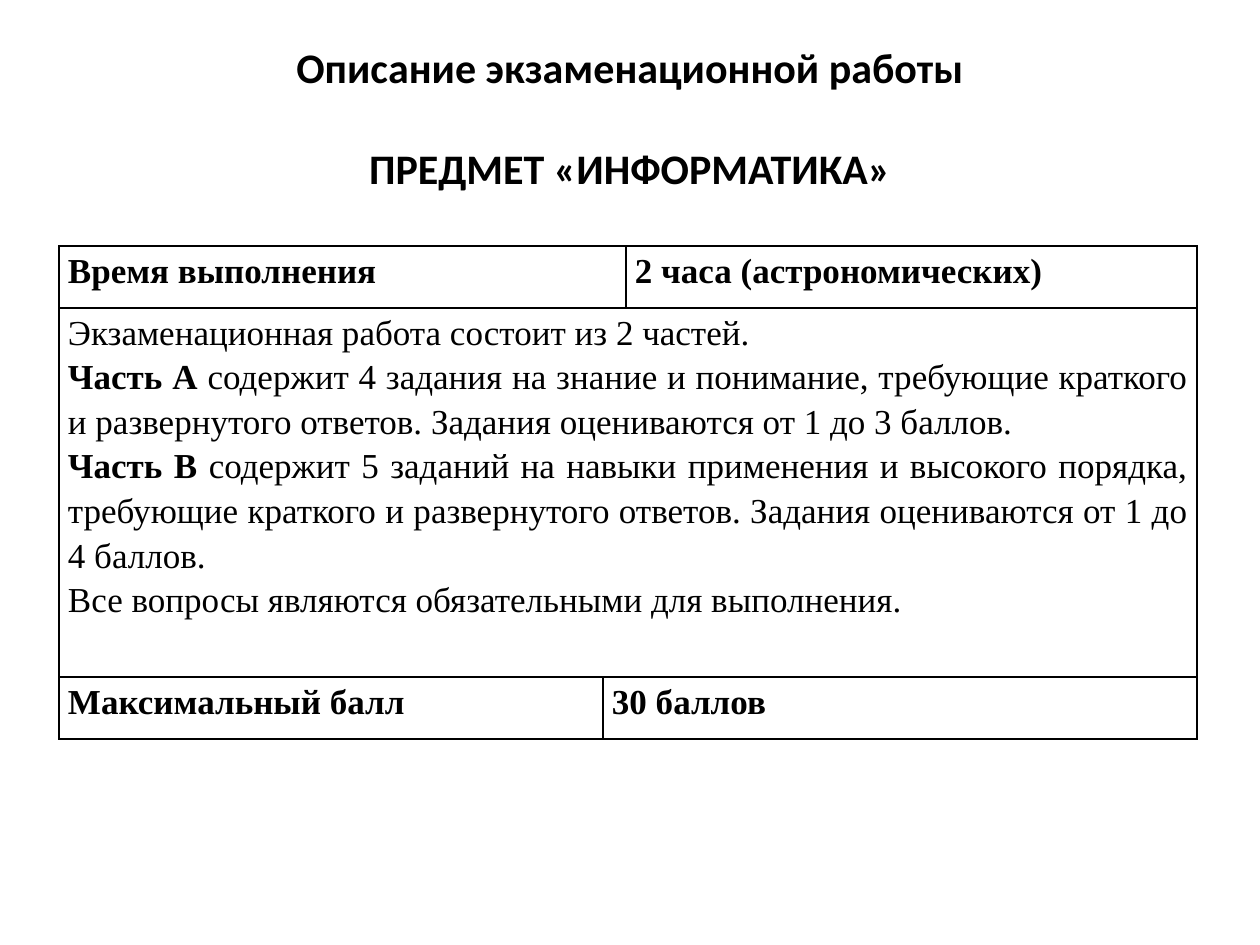
from lxml import etree
from pptx import Presentation
from pptx.dml.color import RGBColor
from pptx.enum.text import MSO_ANCHOR, PP_ALIGN
from pptx.oxml.ns import qn
from pptx.util import Emu, Pt

PX = 914400 // 126
LEFT, CENTER, JUST = PP_ALIGN.LEFT, PP_ALIGN.CENTER, PP_ALIGN.JUSTIFY
MIDDLE = MSO_ANCHOR.MIDDLE
COLORS = {"ink": "000000"}

# Content: a paragraph is (alignment, [(text, bold), ...])
TITLE = ["Описание экзаменационной работы", "ПРЕДМЕТ «ИНФОРМАТИКА»"]
ABOUT = [
    (JUST, [("Экзаменационная работа состоит из 2 частей.", False)]),
    (JUST, [("Часть А", True),
            (" содержит 4 задания на знание и понимание, требующие краткого "
             "и развернутого ответов. Задания оцениваются от 1 до 3 баллов.", False)]),
    (JUST, [("Часть В", True),
            (" содержит 5 заданий на навыки применения и высокого порядка, "
             "требующие краткого и развернутого ответов. "
             "Задания оцениваются от 1 до 4 баллов.", False)]),
    (LEFT, [("Все вопросы являются обязательными для выполнения.", False)]),
]
# Cells: (row, first column, last column, paragraphs)
CELLS = [
    (0, 0, 1, [(LEFT, [("Время выполнения", True)])]),
    (0, 2, 2, [(LEFT, [("2 часа (астрономических)", True)])]),
    (1, 0, 2, ABOUT),
    (2, 0, 0, [(JUST, [("Максимальный балл", True)])]),
    (2, 1, 2, [(JUST, [("30 баллов", True)])]),
]
COLS, ROWS = [544, 17, 571], [62, 369, 62]
HEAD = {"name": "Calibri", "size": Pt(24), "bold": True}
BODY = {"name": "Times New Roman", "size": Pt(20)}
INSET = {"margin_left": 9, "margin_right": 9, "margin_top": 0, "margin_bottom": 0}


def px(n):
    return Emu(n * PX)


def style(font, **values):
    for key, val in values.items():
        setattr(font, key, val)
    font.color.rgb = RGBColor.from_string(COLORS["ink"])


def add_title(slide):
    box = slide.shapes.add_textbox(px(63), px(38), px(1134), px(158))
    frame = box.text_frame
    frame.word_wrap = True
    frame.vertical_anchor = MIDDLE
    for i, line in enumerate(TITLE):
        para = frame.paragraphs[0] if i == 0 else frame.add_paragraph()
        para.alignment = CENTER
        para.space_before = Pt(29 * i)
        run = para.add_run()
        run.text = line
        style(run.font, **HEAD)


def add_border(cell):
    props = cell._tc.get_or_add_tcPr()
    for i, side in enumerate(("lnL", "lnR", "lnT", "lnB")):
        line = etree.Element(qn(f"a:{side}"), w=str(Pt(1)))
        fill = etree.SubElement(line, qn("a:solidFill"))
        etree.SubElement(fill, qn("a:srgbClr"), val=COLORS["ink"])
        props.insert(i, line)


def fill_cell(cell, paras):
    for key, val in INSET.items():
        setattr(cell, key, px(val))
    frame = cell.text_frame
    for i, (align, runs) in enumerate(paras):
        para = frame.paragraphs[0] if i == 0 else frame.add_paragraph()
        para.alignment = align
        para.line_spacing = 1.15
        for text, bold in runs:
            run = para.add_run()
            run.text = text
            style(run.font, bold=bold, **BODY)


def add_grid(slide):
    table = slide.shapes.add_table(len(ROWS), len(COLS), px(59), px(246),
                                   px(sum(COLS)), px(sum(ROWS))).table
    table.first_row = table.horz_banding = False
    for col, width in zip(table.columns, COLS):
        col.width = px(width)
    for row, height in zip(table.rows, ROWS):
        row.height = px(height)
    for cell in table.iter_cells():
        cell.fill.background()
        add_border(cell)
    for row, first, last, paras in CELLS:
        cell = table.cell(row, first)
        if last > first:
            cell.merge(table.cell(row, last))
        fill_cell(cell, paras)


def main():
    deck = Presentation()
    deck.slide_width, deck.slide_height = px(1260), px(945)
    slide = deck.slides.add_slide(deck.slide_layouts[6])
    add_title(slide)
    add_grid(slide)
    deck.save("out.pptx")


if __name__ == "__main__":
    main()
